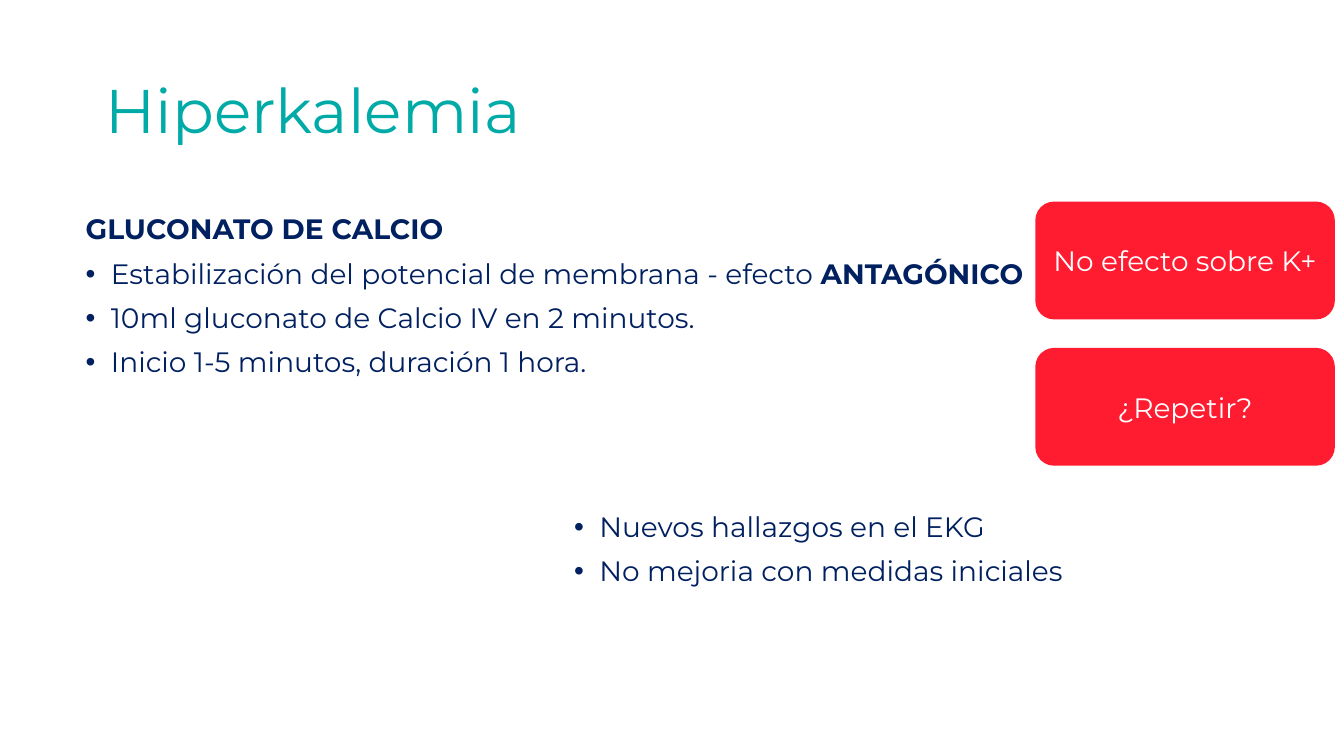
from pptx import Presentation
from pptx.dml.color import RGBColor
from pptx.enum.shapes import MSO_SHAPE
from pptx.enum.text import MSO_ANCHOR, MSO_AUTO_SIZE, PP_ALIGN
from pptx.oxml.ns import qn
from pptx.util import Pt
from lxml.etree import SubElement

NAVY, TEAL, RED, WHITE = "002060", "00AAA7", "FF1B30", "FFFFFF"

# Each paragraph is a list of (text, bold) runs.
TITLE = [[("Hiperkalemia", False)]]
HEAD = [("GLUCONATO DE CALCIO", True)]
FACTS = [
    [("Estabilización del potencial de membrana - efecto ", False),
     ("ANTAGÓNICO", True)],
    [("10ml gluconato de Calcio IV en 2 minutos.", False)],
    [("Inicio 1-5 minutos, duración 1 hora.", False)],
]
SIGNS = [
    [("Nuevos hallazgos en el EKG", False)],
    [("No mejoria con medidas iniciales", False)],
]
CARDS = ["No efecto sobre K+", "¿Repetir?"]

CARD_X, CARD_Y, CARD_W, CARD_H, CARD_STEP = 739.5, 144, 214, 84.2, 104.5


def color(code):
    return RGBColor.from_string(code)


def place(shape, left, top, width, height):
    shape.left, shape.top = Pt(left), Pt(top)
    shape.width, shape.height = Pt(width), Pt(height)


def mark(para, dot):
    """Give the paragraph a hanging bullet, or none."""
    props = para._p.get_or_add_pPr()
    props.set("marL", str(Pt(18) if dot else 0))
    props.set("indent", str(Pt(-18) if dot else 0))
    if dot:
        SubElement(props, qn("a:buFont"), typeface="Arial")
        SubElement(props, qn("a:buChar"), char="•")
    else:
        SubElement(props, qn("a:buNone"))


def write(shape, paras, size=20, ink=NAVY, align=PP_ALIGN.LEFT,
          anchor=MSO_ANCHOR.TOP, line=0.9, gap=10, plain=None):
    """Fill the shape; the first `plain` paragraphs have no bullet."""
    frame = shape.text_frame
    frame.word_wrap = True
    frame.auto_size = MSO_AUTO_SIZE.NONE
    frame.vertical_anchor = anchor
    plain = len(paras) if plain is None else plain
    for i, runs in enumerate(paras):
        para = frame.add_paragraph() if i else frame.paragraphs[0]
        mark(para, i >= plain)
        para.alignment = align
        para.line_spacing = line
        para.space_before = Pt(gap if i else 0)
        for text, bold in runs:
            run = para.add_run()
            run.text = text
            font = run.font
            font.name, font.size, font.bold = "Montserrat", Pt(size), bold
            font.color.rgb = color(ink)


def main():
    deck = Presentation()
    deck.slide_width, deck.slide_height = Pt(960), Pt(540)
    slide = deck.slides.add_slide(deck.slide_layouts[1])
    shapes = slide.shapes

    title, body = shapes.title, slide.placeholders[1]
    place(title, 66, 28.8, 315.5, 104.4)
    write(title, TITLE, size=44, ink=TEAL, align=PP_ALIGN.CENTER,
          anchor=MSO_ANCHOR.MIDDLE)
    place(body, 54, 150.5, 840, 192)
    write(body, [HEAD] + FACTS, plain=1)

    for i, text in enumerate(CARDS):
        card = shapes.add_shape(
            MSO_SHAPE.ROUNDED_RECTANGLE, Pt(CARD_X),
            Pt(CARD_Y + i * CARD_STEP), Pt(CARD_W), Pt(CARD_H))
        card.adjustments[0] = 0.16
        card.shadow.inherit = False
        card.fill.solid()
        card.fill.fore_color.rgb = color(RED)
        card.line.fill.background()
        frame = card.text_frame
        frame.margin_left = frame.margin_right = Pt(4.5)
        frame.margin_top = frame.margin_bottom = Pt(4.5)
        write(card, [[(text, False)]], ink=WHITE, align=PP_ALIGN.CENTER,
              anchor=MSO_ANCHOR.MIDDLE, line=1)

    signs = shapes.add_textbox(Pt(403), Pt(363), Pt(840), Pt(198.7))
    write(signs, SIGNS, plain=0)

    deck.save("out.pptx")


if __name__ == "__main__":
    main()
